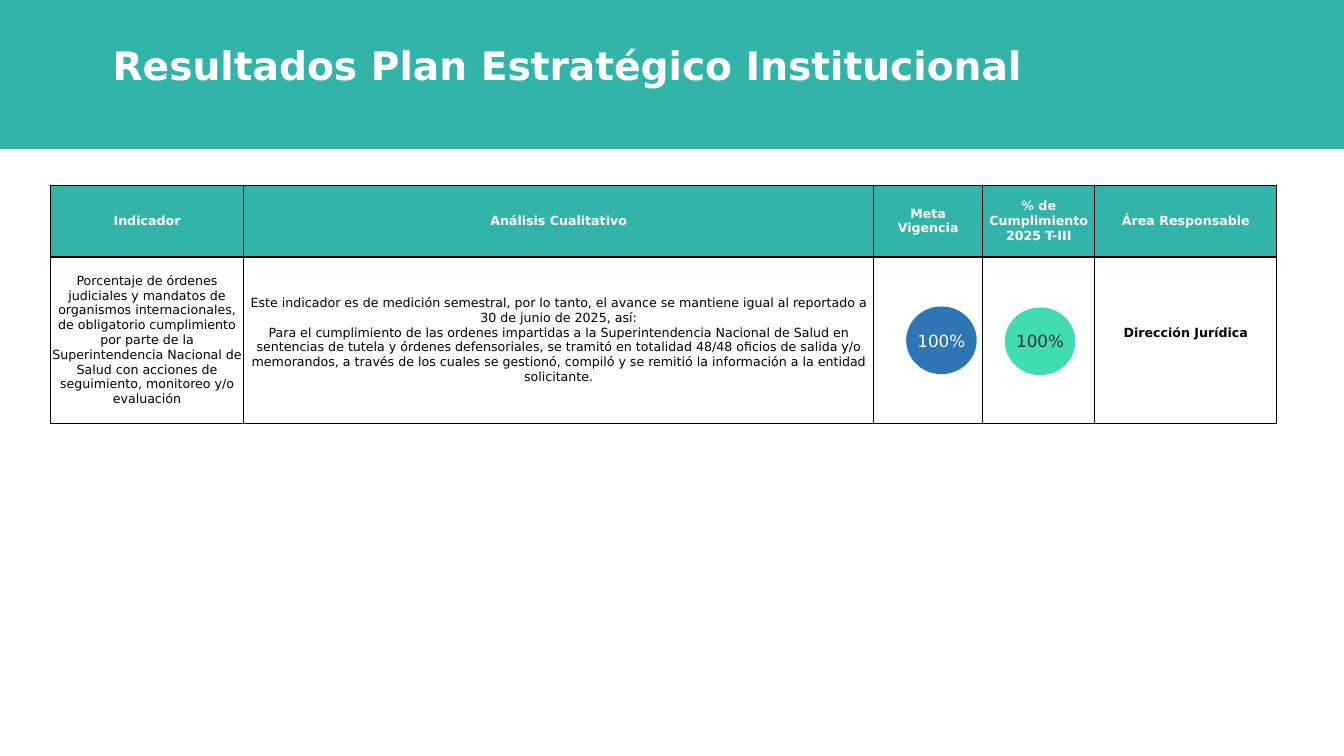
"""Build the slide with the results of the institutional strategic plan."""
from lxml import etree
from pptx import Presentation
from pptx.dml.color import RGBColor
from pptx.enum.shapes import MSO_SHAPE
from pptx.enum.text import MSO_ANCHOR, MSO_AUTO_SIZE, PP_ALIGN
from pptx.oxml.ns import qn
from pptx.util import Pt

RECTANGLE, OVAL = MSO_SHAPE.RECTANGLE, MSO_SHAPE.OVAL
CENTER, MIDDLE = PP_ALIGN.CENTER, MSO_ANCHOR.MIDDLE
FIT_SHAPE = MSO_AUTO_SIZE.SHAPE_TO_FIT_TEXT

TITLE = "Resultados Plan Estratégico Institucional"
HEADERS = ["Indicador", "Análisis Cualitativo", "Meta\vVigencia",
           "% de Cumplimiento 2025 T-III", "Área Responsable"]
RESULTS = [
    "Porcentaje de órdenes judiciales y mandatos de organismos internacionales, "
    "de obligatorio cumplimiento por parte de la Superintendencia Nacional de Salud "
    "con acciones de seguimiento, monitoreo y/o evaluación",
    "Este indicador es de medición semestral, por lo tanto, el avance se mantiene "
    "igual al reportado a 30 de junio de 2025, así:\n"
    "Para el cumplimiento de las ordenes impartidas a la Superintendencia Nacional "
    "de Salud en sentencias de tutela y órdenes defensoriales, se tramitó en totalidad "
    "48/48 oficios de salida y/o memorandos, a través de los cuales se gestionó, "
    "compiló y se remitió la información a la entidad solicitante.",
    "", "", "Dirección Jurídica",
]
COLUMN_WIDTHS = [138, 450, 78, 80, 130]
ROW_HEIGHTS = [51.1, 118.8]
TABLE_LEFT, TABLE_TOP = 36, 132.5
CIRCLES = [("100%", 717.8, 219.6, "progress", "dark"),
           ("100%", 647.3, 218.9, "goal", "white")]
CIRCLE_SIZE = (50.4, 48.4)
AREA_BOTTOM_MARGIN = 10
SLIDE_SIZE = (960, 540)
BAND_HEIGHT = 106.6

THEME = {
    "font": "DejaVu Sans",
    "colors": {"teal": "32B4A8", "white": "FFFFFF", "black": "000000",
               "dark": "2D2D2D", "progress": "40DCB3", "goal": "2E75B6"},
    "sizes": {"title": 28, "circle": 12, "table": 9},
}


def color(name):
    return RGBColor.from_string(THEME["colors"][name])


def write(text_frame, text, size, color_name, bold=False):
    text_frame.text = text
    for paragraph in text_frame.paragraphs:
        paragraph.alignment = CENTER
        for run in paragraph.runs:
            run.font.name = THEME["font"]
            run.font.size = Pt(THEME["sizes"][size])
            run.font.bold = bold
            run.font.color.rgb = color(color_name)


def clear_margins(holder):
    holder.margin_left = holder.margin_right = 0
    holder.margin_top = holder.margin_bottom = 0


def add_filled_shape(slide, kind, left, top, width, height, fill):
    shape = slide.shapes.add_shape(kind, Pt(left), Pt(top), Pt(width), Pt(height))
    shape.shadow.inherit = False
    shape.fill.solid()
    shape.fill.fore_color.rgb = color(fill)
    shape.line.fill.background()
    return shape


def set_borders(cell, bottom_width):
    properties = cell._tc.get_or_add_tcPr()
    for position, side in enumerate(("lnL", "lnR", "lnT", "lnB")):
        width = bottom_width if side == "lnB" else 1
        line = etree.Element(qn(f"a:{side}"), w=str(Pt(width)))
        fill = etree.SubElement(line, qn("a:solidFill"))
        etree.SubElement(fill, qn("a:srgbClr"), val=THEME["colors"]["black"])
        properties.insert(position, line)


def add_results_table(slide):
    rows = [HEADERS, RESULTS]
    frame = slide.shapes.add_table(
        len(rows), len(HEADERS), Pt(TABLE_LEFT), Pt(TABLE_TOP),
        Pt(sum(COLUMN_WIDTHS)), Pt(sum(ROW_HEIGHTS)))
    table = frame.table
    table.first_row = table.horz_banding = False
    for column, width in zip(table.columns, COLUMN_WIDTHS):
        column.width = Pt(width)
    for row_index, texts in enumerate(rows):
        table.rows[row_index].height = Pt(ROW_HEIGHTS[row_index])
        is_header = row_index == 0
        for column_index, text in enumerate(texts):
            cell = table.cell(row_index, column_index)
            clear_margins(cell)
            cell.vertical_anchor = MIDDLE
            is_area = column_index == len(HEADERS) - 1
            write(cell.text_frame, text, "table",
                  "white" if is_header else "black", is_header or is_area)
            if is_header:
                cell.fill.solid()
                cell.fill.fore_color.rgb = color("teal")
            else:
                cell.fill.background()
            set_borders(cell, 2 if is_header else 1)
    table.cell(1, len(HEADERS) - 1).margin_bottom = Pt(AREA_BOTTOM_MARGIN)


def add_circles(slide):
    for text, left, top, fill, text_color in CIRCLES:
        circle = add_filled_shape(slide, OVAL, left, top, *CIRCLE_SIZE, fill)
        text_frame = circle.text_frame
        clear_margins(text_frame)
        text_frame.word_wrap = False
        text_frame.vertical_anchor = MIDDLE
        write(text_frame, text, "circle", text_color)


def add_title(slide):
    box = slide.shapes.add_textbox(Pt(72), Pt(26), Pt(666), Pt(41))
    box.text_frame.word_wrap = True
    box.text_frame.auto_size = FIT_SHAPE
    write(box.text_frame, TITLE, "title", "white", True)


def main():
    presentation = Presentation()
    presentation.slide_width, presentation.slide_height = map(Pt, SLIDE_SIZE)
    slide = presentation.slides.add_slide(presentation.slide_layouts[6])
    add_filled_shape(slide, RECTANGLE, 0, 0, SLIDE_SIZE[0], BAND_HEIGHT, "teal")
    add_results_table(slide)
    add_circles(slide)
    add_title(slide)
    presentation.save("out.pptx")


if __name__ == "__main__":
    main()
